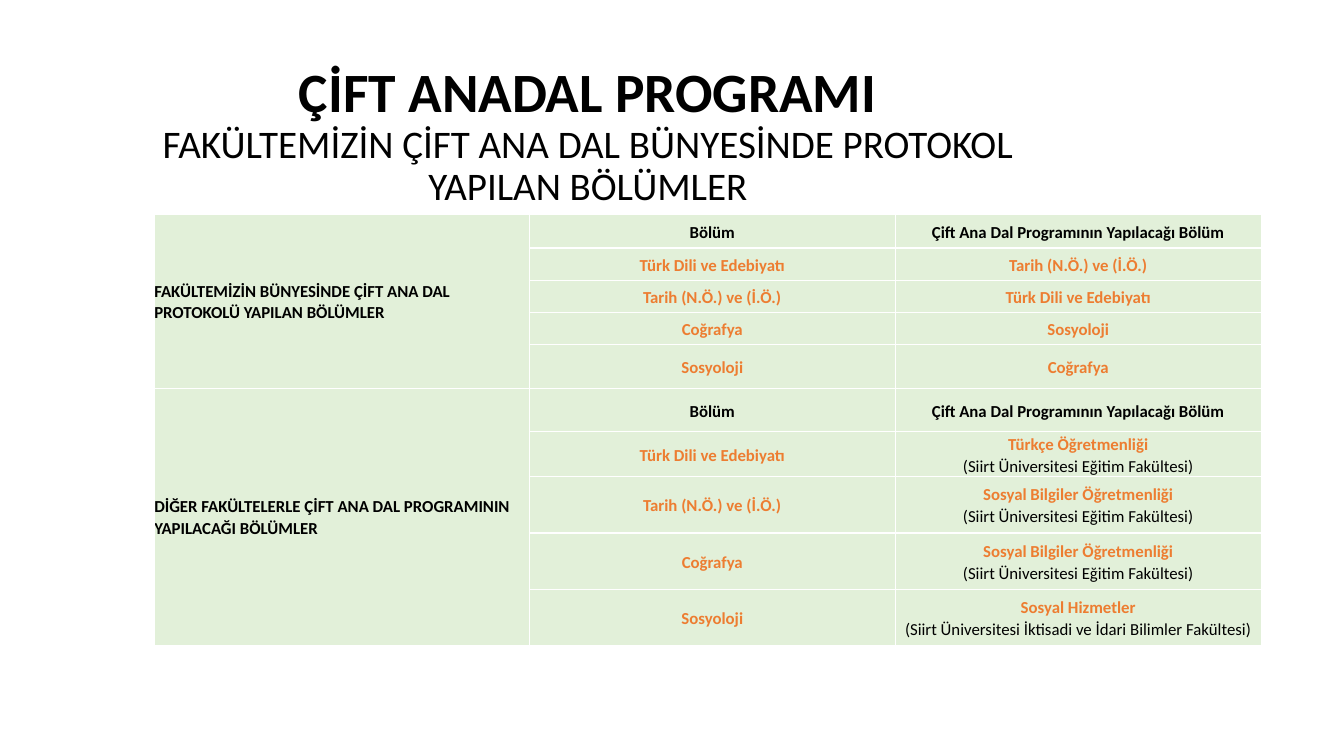
from lxml.etree import SubElement
from pptx import Presentation
from pptx.dml.color import RGBColor
from pptx.enum.text import MSO_ANCHOR as Anchor, MSO_AUTO_SIZE as AutoSize, PP_ALIGN as Align
from pptx.oxml.ns import qn
from pptx.util import Inches, Pt

BLACK = RGBColor(0x00, 0x00, 0x00)
ORANGE = RGBColor(0xED, 0x7D, 0x31)
GREEN = RGBColor(0xE2, 0xF0, 0xD9)
FONT = "Calibri"

TITLE = "ÇİFT ANADAL PROGRAMI"
SUBTITLE = "FAKÜLTEMİZİN ÇİFT ANA DAL BÜNYESİNDE PROTOKOL YAPILAN BÖLÜMLER"
HEADINGS = ("Bölüm", "Çift Ana Dal Programının Yapılacağı Bölüm")
EDUCATION = "(Siirt Üniversitesi Eğitim Fakültesi)"
ECONOMICS = "(Siirt Üniversitesi İktisadi ve İdari Bilimler Fakültesi)"

# Each group: label, then (department, partner department, partner faculty)
GROUPS = [
    ("FAKÜLTEMİZİN BÜNYESİNDE ÇİFT ANA DAL PROTOKOLÜ YAPILAN BÖLÜMLER", [
        ("Türk Dili ve Edebiyatı", "Tarih (N.Ö.) ve (İ.Ö.)", None),
        ("Tarih (N.Ö.) ve (İ.Ö.)", "Türk Dili ve Edebiyatı", None),
        ("Coğrafya", "Sosyoloji", None),
        ("Sosyoloji", "Coğrafya", None),
    ]),
    ("DİĞER FAKÜLTELERLE ÇİFT ANA DAL PROGRAMININ YAPILACAĞI BÖLÜMLER", [
        ("Türk Dili ve Edebiyatı", "Türkçe Öğretmenliği", EDUCATION),
        ("Tarih (N.Ö.) ve (İ.Ö.)", "Sosyal Bilgiler Öğretmenliği", EDUCATION),
        ("Coğrafya", "Sosyal Bilgiler Öğretmenliği", EDUCATION),
        ("Sosyoloji", "Sosyal Hizmetler", ECONOMICS),
    ]),
]
COLUMN_WIDTHS = (3.72, 3.63, 3.63)
ROW_HEIGHTS = (0.33, 0.32, 0.32, 0.32, 0.43, 0.43, 0.44, 0.56, 0.56, 0.56)


def set_font(font, size, color=BLACK, bold=True):
    font.color.rgb = color
    values = {"name": FONT, "size": Pt(size), "bold": bold}
    for name, value in values.items():
        setattr(font, name, value)


def add_title(page):
    title = page.shapes.title
    place = {"left": 0.92, "top": 0.77, "width": 9.82, "height": 1.79}
    for name, value in place.items():
        setattr(title, name, Inches(value))
    frame = title.text_frame
    frame.auto_size = AutoSize.NONE
    frame.word_wrap = True
    frame.vertical_anchor = Anchor.MIDDLE
    frame.margin_bottom = Inches(0.66)
    para = frame.paragraphs[0]
    para.alignment = Align.CENTER
    para.line_spacing = 0.9
    span = para.add_run()
    span.text = TITLE
    set_font(span.font, 39.6)
    para.add_line_break()
    span = para.add_run()
    span.text = SUBTITLE
    set_font(span.font, 27.9, bold=False)


def style_cell(cell, margin):
    """Give a cell white one-point borders, green fill and its margins."""
    properties = cell._tc.get_or_add_tcPr()
    for side in ("lnL", "lnR", "lnT", "lnB"):
        line = SubElement(properties, qn(f"a:{side}"), w=str(Pt(1)))
        fill = SubElement(line, qn("a:solidFill"))
        SubElement(fill, qn("a:srgbClr"), val="FFFFFF")
    cell.fill.solid()
    cell.fill.fore_color.rgb = GREEN
    cell.vertical_anchor = Anchor.MIDDLE
    for side in ("left", "right", "top"):
        setattr(cell, f"margin_{side}", Inches(margin))
    cell.margin_bottom = 0


def write_cell(cell, lines, align=Align.CENTER):
    """Write one paragraph for each (text, color, bold) line."""
    frame = cell.text_frame
    for index, (text, color, bold) in enumerate(lines):
        para = frame.add_paragraph() if index else frame.paragraphs[0]
        para.alignment = align
        para.line_spacing = 1.07
        span = para.add_run()
        span.text = text
        set_font(span.font, 12, color, bold)


def add_departments(page):
    table = page.shapes.add_table(
        len(ROW_HEIGHTS), len(COLUMN_WIDTHS), Inches(1.53), Inches(2.13),
        Inches(sum(COLUMN_WIDTHS)), Inches(sum(ROW_HEIGHTS))).table
    table.first_row = table.horz_banding = False
    for column, width in zip(table.columns, COLUMN_WIDTHS):
        column.width = Inches(width)
    for row, height in zip(table.rows, ROW_HEIGHTS):
        row.height = Inches(height)
        for index, cell in enumerate(row.cells):
            style_cell(cell, 0.01 if index else 0)

    top = 0
    for label, programs in GROUPS:
        bottom = top + len(programs)
        table.cell(top, 0).merge(table.cell(bottom, 0))
        write_cell(table.cell(top, 0), [(label, BLACK, True)], Align.LEFT)
        for column, heading in enumerate(HEADINGS, 1):
            write_cell(table.cell(top, column), [(heading, BLACK, True)])
        for row, (department, partner, faculty) in enumerate(programs, top + 1):
            write_cell(table.cell(row, 1), [(department, ORANGE, True)])
            lines = [(partner, ORANGE, True)]
            if faculty:
                lines.append((faculty, BLACK, False))
            write_cell(table.cell(row, 2), lines)
        top = bottom + 1


def main():
    deck = Presentation()
    deck.slide_width = Inches(13.33)
    deck.slide_height = Inches(7.5)
    page = deck.slides.add_slide(deck.slide_layouts[5])
    add_title(page)
    add_departments(page)
    deck.save("out.pptx")


if __name__ == "__main__":
    main()
